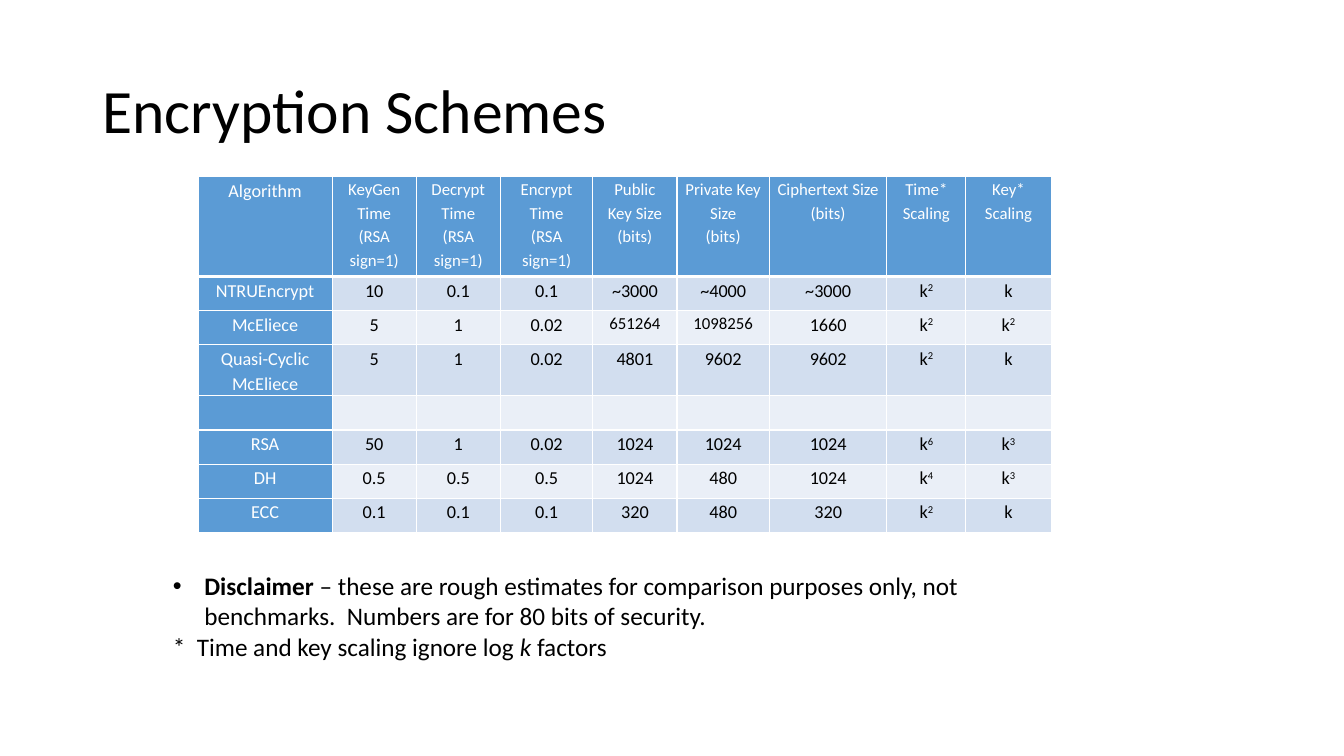
from lxml import etree
from pptx import Presentation
from pptx.dml.color import RGBColor
from pptx.enum.text import MSO_ANCHOR, PP_ALIGN
from pptx.oxml.ns import qn
from pptx.util import Cm, Pt

LEFT, CENTER = PP_ALIGN.LEFT, PP_ALIGN.CENTER
MIDDLE, TOP = MSO_ANCHOR.MIDDLE, MSO_ANCHOR.TOP
FONT = "Calibri"
COLORS = {"header": "5B9BD5", "odd": "D2DEEF", "even": "EAEFF7",
          "text": "000000", "light": "FFFFFF"}

TITLE = "Encryption Schemes"
# A line break separates paragraphs; "^" raises what follows it.
HEADINGS = ["Algorithm", "KeyGen Time\n(RSA sign=1)", "Decrypt Time\n(RSA sign=1)",
            "Encrypt Time\n(RSA sign=1)", "Public Key Size\n(bits)",
            "Private Key Size\n(bits)", "Ciphertext Size\n(bits)",
            "Time* Scaling", "Key*\nScaling"]
SCHEMES = [
    ["NTRUEncrypt", "10", "0.1", "0.1", "~3000", "~4000", "~3000", "k^2", "k"],
    ["McEliece", "5", "1", "0.02", "651264", "1098256", "1660", "k^2", "k^2"],
    ["Quasi-Cyclic McEliece", "5", "1", "0.02", "4801", "9602", "9602", "k^2", "k"],
    [""] * 9,
    ["RSA", "50", "1", "0.02", "1024", "1024", "1024", "k^6", "k^3"],
    ["DH", "0.5", "0.5", "0.5", "1024", "480", "1024", "k^4", "k^3"],
    ["ECC", "0.1", "0.1", "0.1", "320", "480", "320", "k^2", "k"],
]
DISCLAIMER = [
    ("Disclaimer", {"bold": True}),
    (" – these are rough estimates for comparison purposes only, not benchmarks."
     "  Numbers are for 80 bits of security.", {}),
]
SCALING_NOTE = [("*  Time and key scaling ignore log ", {}),
                ("k", {"italic": True}), (" factors", {})]

COLUMN_WIDTHS = [3.38, 2.12, 2.12, 2.33, 2.12, 2.33, 2.96, 1.99, 2.15]
ROW_HEIGHTS = [2.52, 0.86, 0.86, 1.24, 0.86, 0.86, 0.86, 0.86]


def add_text(paragraph, text, size, color="text", bold=False, italic=False, raised=False):
    run = paragraph.add_run()
    run.text = text
    font = run.font
    font.name, font.size = FONT, Pt(size)
    font.bold, font.italic = bold, italic
    font.color.rgb = RGBColor.from_string(COLORS[color])
    if raised:
        font._element.set("baseline", "30000")


def add_borders(cell, bottom_width):
    properties = cell._tc.get_or_add_tcPr()
    for side in "LRTB":
        width = bottom_width if side == "B" else 1
        line = etree.SubElement(properties, qn(f"a:ln{side}"), w=str(Pt(width)))
        line_fill = etree.SubElement(line, qn("a:solidFill"))
        etree.SubElement(line_fill, qn("a:srgbClr"), val=COLORS["light"])


def fill_cell(cell, text, fill, color, size, bottom_width):
    add_borders(cell, bottom_width)
    cell.fill.solid()
    cell.fill.fore_color.rgb = RGBColor.from_string(COLORS[fill])
    cell.margin_left = cell.margin_right = Cm(0.19)
    cell.margin_top = cell.margin_bottom = 0
    cell.vertical_anchor = TOP
    frame = cell.text_frame
    for index, line in enumerate(text.split("\n")):
        paragraph = frame.add_paragraph() if index else frame.paragraphs[0]
        paragraph.alignment, paragraph.line_spacing = CENTER, 1.15
        base, _, exponent = line.partition("^")
        if base:
            add_text(paragraph, base, size, color)
        if exponent:
            add_text(paragraph, exponent, size, color, raised=True)


def add_scheme_table(slide):
    rows = [HEADINGS] + SCHEMES
    table = slide.shapes.add_table(
        len(rows), len(HEADINGS), Cm(4.99), Cm(4.45),
        Cm(sum(COLUMN_WIDTHS)), Cm(sum(ROW_HEIGHTS))).table
    table.first_col = True
    for column, width in zip(table.columns, COLUMN_WIDTHS):
        column.width = Cm(width)
    for r, (row, height) in enumerate(zip(rows, ROW_HEIGHTS)):
        table.rows[r].height = Cm(height)
        for c, text in enumerate(row):
            is_header = r == 0 or c == 0
            band = "odd" if r % 2 else "even"
            is_small = (r == 0 and c > 0) or len(text) > 5 and c > 0
            fill_cell(table.cell(r, c), text,
                      fill="header" if is_header else band,
                      color="light" if is_header else "text",
                      size=12 if is_small else 13,
                      bottom_width=1 if r else 3)


def add_notes_below(slide):
    frame = slide.shapes.add_textbox(Cm(4.11), Cm(14.25), Cm(21.39), Cm(2.57)).text_frame
    frame.word_wrap = True
    disclaimer, scaling_note = frame.paragraphs[0], frame.add_paragraph()
    for paragraph, pieces in ((disclaimer, DISCLAIMER), (scaling_note, SCALING_NOTE)):
        for text, style in pieces:
            add_text(paragraph, text, 18, **style)
    properties = disclaimer._p.get_or_add_pPr()
    properties.set("marL", str(Cm(0.79)))
    properties.set("indent", str(Cm(-0.79)))
    etree.SubElement(properties, qn("a:buFont"), typeface="Arial")
    etree.SubElement(properties, qn("a:buChar"), char="•")


def main():
    presentation = Presentation()
    presentation.slide_width, presentation.slide_height = Cm(33.87), Cm(19.05)
    slide = presentation.slides.add_slide(presentation.slide_layouts[5])

    title = slide.shapes.title
    title.left, title.top, title.width, title.height = Cm(2.33), Cm(1.01), Cm(29.21), Cm(3.68)
    title.text_frame.vertical_anchor = MIDDLE
    heading = title.text_frame.paragraphs[0]
    heading.alignment, heading.line_spacing = LEFT, 0.9
    add_text(heading, TITLE, 44)

    add_scheme_table(slide)
    add_notes_below(slide)
    presentation.save("out.pptx")


if __name__ == "__main__":
    main()
